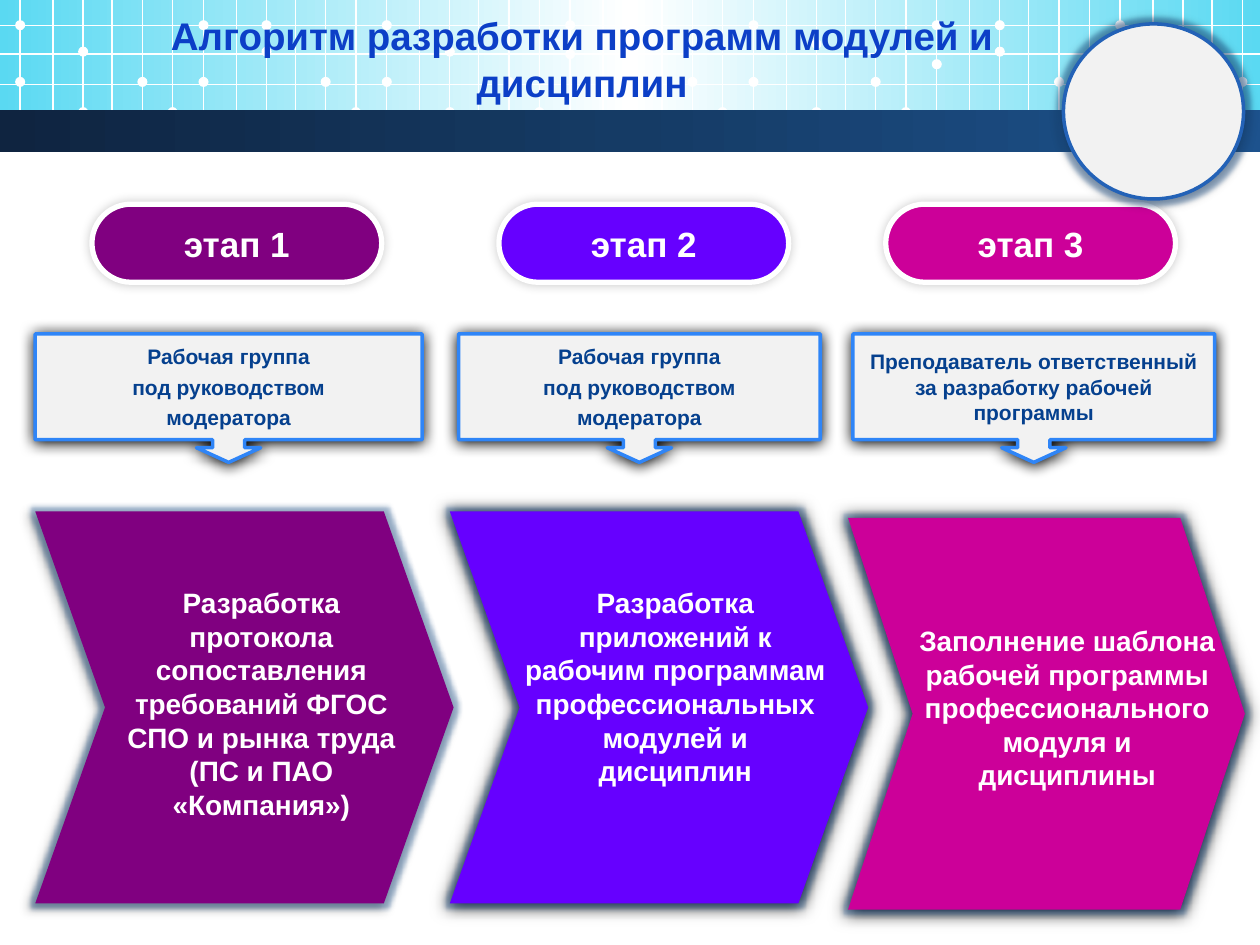
from dataclasses import dataclass
from typing import NamedTuple, Optional

from pptx import Presentation
from pptx.dml.color import RGBColor
from pptx.enum.shapes import MSO_CONNECTOR, MSO_SHAPE
from pptx.enum.text import MSO_ANCHOR, PP_ALIGN
from pptx.oxml import parse_xml
from pptx.oxml.ns import nsdecls, qn
from pptx.util import Inches, Pt

RECT, OVAL, PILL = MSO_SHAPE.RECTANGLE, MSO_SHAPE.OVAL, MSO_SHAPE.ROUNDED_RECTANGLE
CHEVRON, CALLOUT = MSO_SHAPE.CHEVRON, MSO_SHAPE.DOWN_ARROW_CALLOUT
STRAIGHT = MSO_CONNECTOR.STRAIGHT
TOP, MIDDLE = MSO_ANCHOR.TOP, MSO_ANCHOR.MIDDLE
CENTER = PP_ALIGN.CENTER

FONT = "Arial"
COLORS = {
    "white": "FFFFFF", "black": "000000", "pale": "F2F2F2",
    "sky": "5AD9F2", "night": "0F2440", "navy": "153B65", "blue": "1D528D",
    "title": "0C3FC7", "who": "05408E", "who_edge": "2F85F7", "ring": "2362B7",
    "purple": "800080", "violet": "6600FF", "magenta": "CC0099",
}
SLIDE_W, SLIDE_H = Inches(10), Inches(7.5)


class Box(NamedTuple):
    """Percent of the slide's width (x, w) and height (y, h)."""
    x: float
    y: float
    w: float
    h: float


class Shadow(NamedTuple):
    alpha: int
    blur: float
    dist: float
    angle: int


class Edge(NamedTuple):
    color: str
    width: float


@dataclass
class Stage:
    label: str
    color: str
    pill_x: float
    who: list[str]
    who_x: float
    who_w: float
    task: str
    task_box: Box
    arrow: Box
    notch: float
    shadow: Shadow


STRONG = Shadow(100, 8.5, 1, 90)
SOFT = Shadow(40, 4, 3, 135)
PILL_SHADOW = Shadow(20, 6, 0, 225)
RING_SHADOW = Shadow(40, 5, 0, 0)
GROUP = ["Рабочая группа", "под руководством", "модератора"]

STAGES = [
    Stage("этап 1", "purple", 7.3, GROUP, 2.8, 30.7,
          "Разработка протокола сопоставления требований ФГОС СПО и рынка труда "
          "(ПС и ПАО «Компания»)",
          Box(8.1, 61.33, 25.3, 26.53), Box(2.8, 54.13, 33.2, 41.47), 0.178, SOFT),
    Stage("этап 2", "violet", 39.6, GROUP, 36.4, 28.7,
          "Разработка приложений к рабочим программам профессиональных модулей "
          "и дисциплин",
          Box(40.6, 61.33, 26, 26.53), Box(35.7, 54.13, 33.2, 41.47), 0.178, STRONG),
    Stage("этап 3", "magenta", 70.3,
          ["Преподаватель ответственный за разработку рабочей программы"], 67.7, 28.7,
          "Заполнение шаблона рабочей программы профессионального модуля "
          "и дисциплины",
          Box(71.3, 65.33, 26.8, 19.33), Box(67.3, 54.8, 31.5, 41.47), 0.165, STRONG),
]

# Header lattice: seven blocks of six columns, with dots on some crossings
BLOCK_START, BLOCK_PITCH = 1.6, 14.55
COLUMNS = (0, 2.6, 5, 7.3, 9.7, 12.1)
ROWS = (2.67, 5.73, 8.93, 11.87)
LATTICE_BOTTOM = 14.67
DOT_W, DOT_H = 0.8, 1.07
DOT_COLUMNS = (0, 0, 2, 2, 4, 5)
DOT_FIRST = (8.67, 8.67, 8.67, 5.73, 8.67, 6.8, 8.67)
DOT_THIRD = (5.47, 5.47, 5.47, 5.47, 4.67, 5.47, 5.47)


def rgb(name: str) -> RGBColor:
    return RGBColor.from_string(COLORS[name])


def across(percent: float) -> int:
    return round(SLIDE_W * percent / 100)


def down(percent: float) -> int:
    return round(SLIDE_H * percent / 100)


def place(box: Box) -> tuple[int, int, int, int]:
    return across(box.x), down(box.y), across(box.w), down(box.h)


def add_effects(sp, shadow: Shadow, glow: float) -> None:
    effects = sp._element.spPr.find(qn("a:effectLst"))
    if glow:
        effects.append(parse_xml(
            f'<a:glow {nsdecls("a")} rad="{Pt(glow)}"><a:srgbClr val="{COLORS["blue"]}">'
            '<a:alpha val="40000"/></a:srgbClr></a:glow>'))
    effects.append(parse_xml(
        f'<a:outerShdw {nsdecls("a")} blurRad="{Pt(shadow.blur)}" '
        f'dist="{Pt(shadow.dist)}" dir="{shadow.angle * 60000}" algn="ctr" '
        f'rotWithShape="0"><a:srgbClr val="{COLORS["black"]}">'
        f'<a:alpha val="{shadow.alpha * 1000}"/></a:srgbClr></a:outerShdw>'))


def add_shape(s, kind, box: Box, fill: Optional[str], edge: Optional[Edge] = None,
              adjust: tuple = (), shadow: Optional[Shadow] = None, glow: float = 0):
    sp = s.shapes.add_shape(kind, *place(box))
    for i, value in enumerate(adjust):
        sp.adjustments[i] = value
    if fill:
        sp.fill.solid()
        sp.fill.fore_color.rgb = rgb(fill)
    if edge:
        sp.line.color.rgb = rgb(edge.color)
        sp.line.width = Pt(edge.width)
    else:
        sp.line.fill.background()
    sp.shadow.inherit = False
    if shadow:
        add_effects(sp, shadow, glow)
    return sp


def add_gradient_bar(s, box: Box, colors: list[str]) -> None:
    """Bar whose colours run evenly from left to right."""
    sp = add_shape(s, RECT, box, None)
    stops = "".join(
        f'<a:gs pos="{i * 100000 // (len(colors) - 1)}"><a:srgbClr val="{COLORS[c]}"/></a:gs>'
        for i, c in enumerate(colors))
    geometry = sp._element.spPr.find(qn("a:prstGeom"))
    geometry.addnext(parse_xml(
        f'<a:gradFill {nsdecls("a")} rotWithShape="1"><a:gsLst>{stops}</a:gsLst>'
        '<a:lin ang="0" scaled="0"/></a:gradFill>'))


def add_lattice_line(s, x1: float, y1: float, x2: float, y2: float) -> None:
    line = s.shapes.add_connector(STRAIGHT, across(x1), down(y1), across(x2), down(y2))
    line.line.color.rgb = rgb("white")
    line.line.width = Pt(0.75)
    line._element.spPr.append(parse_xml(f'<a:effectLst {nsdecls("a")}/>'))


def write(sp, lines: list[str], size: float, color: str, anchor=MIDDLE,
          wrap: bool = True, gap: float = 0) -> None:
    tf = sp.text_frame
    tf.word_wrap = wrap
    tf.vertical_anchor = anchor
    for i, text in enumerate(lines):
        p = tf.add_paragraph() if i else tf.paragraphs[0]
        p.text = text
        p.alignment = CENTER
        if i:
            p.space_before = Pt(gap)
        p.font.name, p.font.size, p.font.bold = FONT, Pt(size), True
        p.font.color.rgb = rgb(color)


def draw_header(s) -> None:
    add_gradient_bar(s, Box(0, 0, 100, 13.73), ["sky", "white", "sky"])
    for block, (first, third) in enumerate(zip(DOT_FIRST, DOT_THIRD)):
        xs = [BLOCK_START + block * BLOCK_PITCH + c for c in COLUMNS]
        for x in xs:
            if x < 100:
                add_lattice_line(s, x, 0, x, LATTICE_BOTTOM)
        fourth = ROWS[0] if block % 2 else ROWS[3]
        for column, y in zip(DOT_COLUMNS, (first, ROWS[0], third, fourth, 8.67, ROWS[3])):
            if xs[column] < 100:
                add_shape(s, OVAL, Box(xs[column] - DOT_W / 2, y - DOT_H / 2, DOT_W, DOT_H),
                          "white")
    for y in ROWS:
        add_lattice_line(s, 0, y, 100, y)
    add_gradient_bar(s, Box(0, 11.65, 100, 4.43), ["night", "navy", "blue"])


def main() -> None:
    prs = Presentation()
    prs.slide_width, prs.slide_height = SLIDE_W, SLIDE_H
    s = prs.slides.add_slide(prs.slide_layouts[6])
    draw_header(s)
    for st in reversed(STAGES):
        add_shape(s, CHEVRON, st.arrow, st.color, None, (st.notch,), st.shadow, 5)
    for st in STAGES:
        pill = add_shape(s, PILL, Box(st.pill_x, 21.6, 23, 8.27), st.color,
                         Edge("white", 3), (0.5,), PILL_SHADOW)
        write(pill, [st.label], 20, "white", wrap=False)
        write(s.shapes.add_textbox(*place(st.task_box)), [st.task], 16, "white", TOP)
        who = add_shape(s, CALLOUT, Box(st.who_x, 35.33, st.who_w, 13.6), "pale",
                        Edge("who_edge", 2), (0.25, 0.25, 0.114, 0.824), STRONG)
        write(who, st.who, 12, "who", gap=3)
    title = s.shapes.add_textbox(*place(Box(5.8, 0.67, 80.8, 10.53)))
    write(title, ["Алгоритм разработки программ модулей и дисциплин"], 22, "title", TOP)
    add_shape(s, OVAL, Box(84.4, 2.53, 14.3, 18.53), "pale", Edge("ring", 2),
              shadow=RING_SHADOW, glow=5)
    prs.save("out.pptx")


if __name__ == "__main__":
    main()
